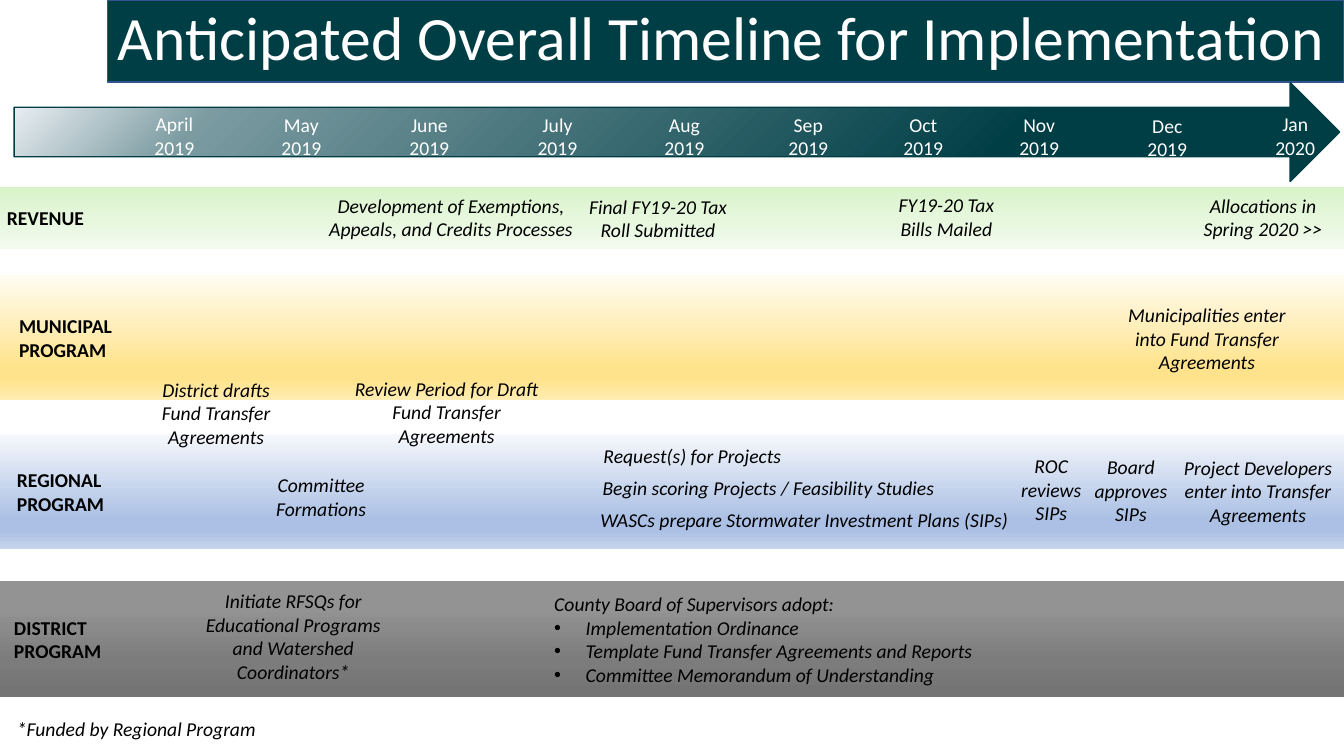
import pptx
import pptx.dml.color
import pptx.enum.shapes
import pptx.enum.text
import pptx.oxml
import pptx.oxml.ns
import pptx.util
from lxml import etree

Pt = pptx.util.Pt
Align = pptx.enum.text.PP_ALIGN
Anchor = pptx.enum.text.MSO_ANCHOR
Preset = pptx.enum.shapes.MSO_SHAPE

FONT = "Calibri"
TEAL, WHITE, BLACK = "003E46", "FFFFFF", "000000"
SLIDE_WIDTH, SLIDE_HEIGHT = 960, 540

TITLE = "Anticipated Overall Timeline for Implementation"
TITLE_BOX = (77, 0, 883, 58.5)
ARROW_BOX = (10.1, 59, 946.8, 70.6)
ARROW_STOPS = [(0, "F6F8FC"), (16, "7B9BA1"), (74, TEAL), (97, TEAL)]

# Month, left, top
MONTHS = [
    ("April\n2019", 99.4, 76.4), ("May\n2019", 190.1, 77), ("June\n2019", 281.5, 77),
    ("July\n2019", 373, 77), ("Aug\n2019", 463.7, 77), ("Sep\n2019", 552.2, 77),
    ("Oct\n2019", 634.3, 77), ("Nov\n2019", 717.1, 77), ("Dec\n2019", 808.6, 77.7),
    ("Jan\n2020", 900, 76.4),
]
MONTH_SIZE = (50.4, 41)

# Program, label left, band top, band height, gradient stops
PROGRAMS = [
    ("REVENUE", -2.2, 133.4, 44.5, [(0, "D9F3C9"), (50, "E6F7DD"), (100, "F2FBEE")]),
    ("MUNICIPAL PROGRAM", 6.5, 196.6, 89.3,
     [(0, "FFFCF2"), (74, "FFE38C"), (83, "FFE38C"), (100, "FFECB2")]),
    ("REGIONAL PROGRAM", 5, 309.9, 82.6,
     [(0, "F6F8FC"), (74, "ABC0E4"), (83, "ABC0E4"), (100, "C7D5ED")]),
    ("DISTRICT PROGRAM", 2.9, 415.2, 82.4,
     [(0, "939393"), (23, "939393"), (69, "7C7C7C"), (97, "747474")]),
]
LABEL_WIDTH = 87.1

# Milestone, left, top, width, height
MILESTONES = [
    ("Development of Exemptions, Appeals, and Credits Processes", 226.8, 123.3, 190.8, 64),
    ("Final FY19-20 Tax Roll Submitted", 411.8, 123.8, 116.6, 64),
    ("FY19-20 Tax Bills Mailed", 627.1, 122.6, 97.9, 64),
    ("Allocations in Spring 2020 >>", 841.7, 123.1, 121, 64),
    ("Municipalities enter into Fund Transfer Agreements", 794.9, 202.5, 134.6, 78.5),
    ("District drafts Fund Transfer Agreements", 98.6, 253.6, 111.6, 82.8),
    ("Review Period for Draft Fund Transfer Agreements", 244.1, 252.9, 149.8, 82.8),
    ("Committee Formations", 182.2, 313.9, 94.3, 82.1),
    ("Request(s) for Projects", 422.6, 304, 144, 42.5),
    ("Begin scoring Projects / Feasibility Studies", 409.7, 309.6, 278.6, 77.8),
    ("WASCs prepare Stormwater Investment Plans (SIPs)", 417.6, 350, 313.9, 42.5),
    ("ROC\nreviews\nSIPs", 702, 308.3, 97.9, 82.8),
    ("Board approves\nSIPs", 758.9, 308.9, 97.9, 82.8),
    ("Project Developers enter into Transfer Agreements", 823.7, 310.5, 149.8, 80.6),
    ("Initiate RFSQs for Educational Programs and Watershed Coordinators*",
     134.6, 419.2, 149.8, 70.6),
]

ADOPTIONS = ["County Board of Supervisors adopt:", "Implementation Ordinance",
             "Template Fund Transfer Agreements and Reports",
             "Committee Memorandum of Understanding"]
ADOPTIONS_BOX = (388.8, 421.2, 313.2, 70.6)
BULLET_INDENT = 22.5

FOOTNOTE = "*Funded by Regional Program"
FOOTNOTE_BOX = (5, 506.2, 249.1, 28.8)


def color(hex_value):
    return pptx.dml.color.RGBColor.from_string(hex_value)


def set_gradient(fill, stops, clockwise_angle):
    fill.gradient()
    fill.gradient_angle = 360 - clockwise_angle
    stop_list = fill.gradient_stops[0]._gs.getparent()
    for old_stop in list(stop_list):
        stop_list.remove(old_stop)
    for position, hex_value in stops:
        stop = etree.SubElement(stop_list, pptx.oxml.ns.qn("a:gs"), pos=str(position * 1000))
        etree.SubElement(stop, pptx.oxml.ns.qn("a:srgbClr"), val=hex_value)


def add_shape(slide, preset, box, line=None):
    shape = slide.shapes.add_shape(preset, *map(Pt, box))
    shape.shadow.inherit = False
    if line:
        shape.line.color.rgb = color(line)
        shape.line.width = Pt(1)
    else:
        shape.line.fill.background()
    return shape


def add_text(slide, text, box, size=14, ink=BLACK, align=Align.LEFT,
             anchor=Anchor.MIDDLE, bold=False, italic=False):
    text_frame = slide.shapes.add_textbox(*map(Pt, box)).text_frame
    text_frame.word_wrap = True
    text_frame.vertical_anchor = anchor
    text_frame.text = text
    for paragraph in text_frame.paragraphs:
        paragraph.alignment = align
        for run in paragraph.runs:
            run.font.name = FONT
            run.font.size = Pt(size)
            run.font.bold = bold
            run.font.italic = italic
            run.font.color.rgb = color(ink)
    return text_frame


def add_bullet(paragraph):
    properties = paragraph._p.get_or_add_pPr()
    properties.set("marL", str(Pt(BULLET_INDENT)))
    properties.set("indent", str(-Pt(BULLET_INDENT)))
    etree.SubElement(properties, pptx.oxml.ns.qn("a:buFont"), typeface="Arial")
    etree.SubElement(properties, pptx.oxml.ns.qn("a:buChar"), char="•")


def main():
    presentation = pptx.Presentation()
    presentation.slide_width = Pt(SLIDE_WIDTH)
    presentation.slide_height = Pt(SLIDE_HEIGHT)
    slide = presentation.slides.add_slide(presentation.slide_layouts[6])

    title_bar = add_shape(slide, Preset.RECTANGLE, TITLE_BOX, line="325491")
    title_bar.fill.solid()
    title_bar.fill.fore_color.rgb = color(TEAL)
    title = add_text(slide, TITLE, TITLE_BOX, size=44, ink=WHITE)
    title.paragraphs[0].line_spacing = 0.9

    for program, left, top, height, stops in PROGRAMS:
        band = add_shape(slide, Preset.RECTANGLE, (0, top, SLIDE_WIDTH, height))
        set_gradient(band.fill, stops, 90)
        add_text(slide, program, (left, top, LABEL_WIDTH, height), bold=True)

    arrow = add_shape(slide, Preset.RIGHT_ARROW, ARROW_BOX, line=TEAL)
    set_gradient(arrow.fill, ARROW_STOPS, 45)
    for month, left, top in MONTHS:
        add_text(slide, month, (left, top, *MONTH_SIZE), ink=WHITE,
                 align=Align.CENTER, anchor=Anchor.TOP)

    for milestone, *box in MILESTONES:
        add_text(slide, milestone, box, align=Align.CENTER, italic=True)

    adoptions = add_text(slide, "\n".join(ADOPTIONS), ADOPTIONS_BOX, italic=True)
    for paragraph in adoptions.paragraphs[1:]:
        add_bullet(paragraph)
    add_text(slide, FOOTNOTE, FOOTNOTE_BOX, italic=True)

    presentation.save("out.pptx")


if __name__ == "__main__":
    main()
